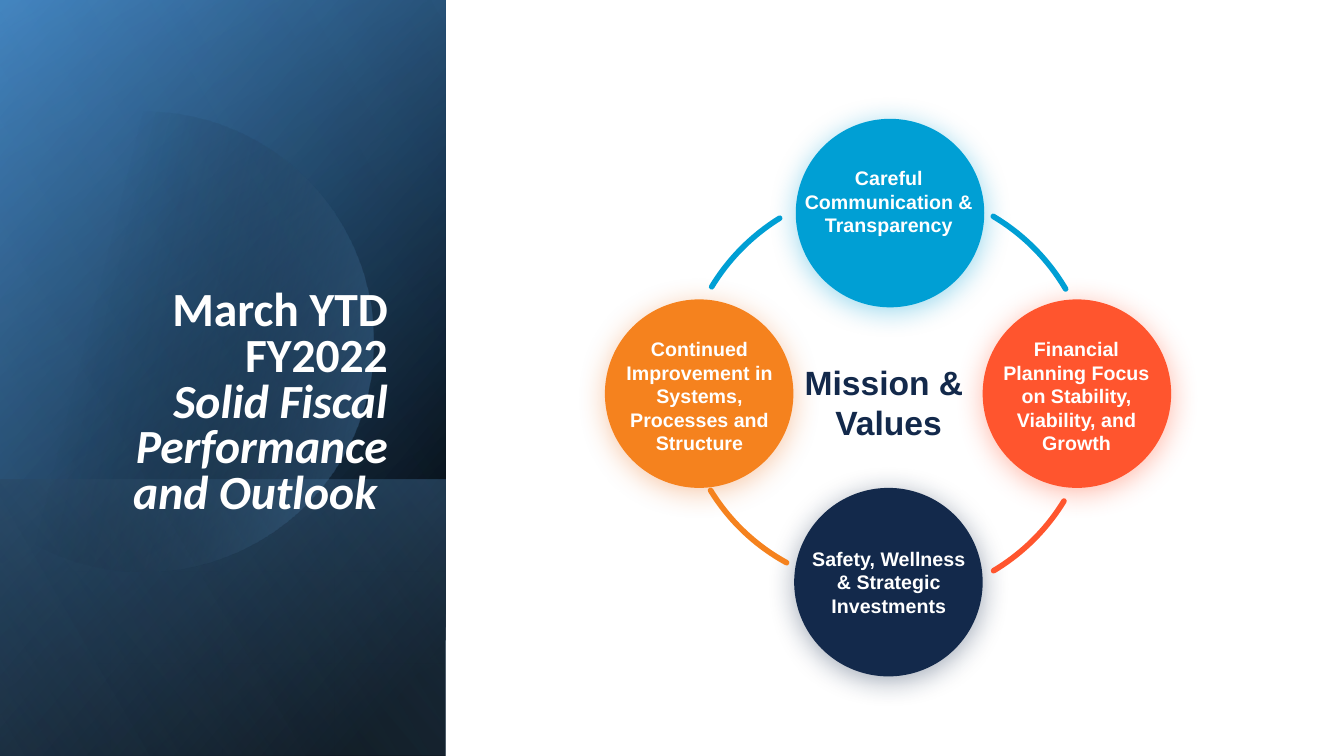
from math import acos, cos, sin

from pptx import Presentation
from pptx.dml.color import RGBColor
from pptx.enum.shapes import MSO_SHAPE
from pptx.enum.text import MSO_ANCHOR, PP_ALIGN
from pptx.oxml import parse_xml
from pptx.oxml.ns import nsdecls, qn
from pptx.util import Cm, Pt

RECTANGLE, ROUNDED, ARC = MSO_SHAPE.RECTANGLE, MSO_SHAPE.ROUNDED_RECTANGLE, MSO_SHAPE.ARC
TOP, MIDDLE, BOTTOM = MSO_ANCHOR.TOP, MSO_ANCHOR.MIDDLE, MSO_ANCHOR.BOTTOM
CENTER, RIGHT = PP_ALIGN.CENTER, PP_ALIGN.RIGHT

WHITE, NAVY, BLUE, RED, ORANGE = "FFFFFF", "13294B", "009FD4", "FF552E", "F5821E"

# Lengths are centimetres; gradient stops are (position %, colour, opacity %)
SLIDE_SIZE = (33.87, 19.05)
PANEL_WIDTH = 11.23
PANEL_LAYERS = [  # top, height, angle, stops
    (0, 19.05, 50, [(8, "000000", 100), (100, "2E75B6", 100)]),
    (0, 19.05, 30, [(0, "000000", 0), (99, "5B9BD5", 46)]),
    (12.09, 6.96, 130, [(2, "5B9BD5", 29), (100, "000000", 30)]),
]
DISC = {"center": (3.63, 8.6), "radius": 5.79, "angle": 14,
        "stops": [(29, "000000", 0), (100, "5B9BD5", 43)]}
TOP_LAYER = (0, 19.05, 120, [(0, "000000", 0), (99, "9DC3E6", 11)])

TITLE_BOX = (1.37, 6.55, 8.66, 6.65)
TITLE = [("March YTD FY2022", False), ("Solid Fiscal Performance and Outlook ", True)]

HUB_BOX = (20.02, 8.99, 4.75, 2.31)
HUB_LINES = ["Mission & ", "Values"]

NODE_SIZE = 4.75
LABEL_WIDTH = 4.78
NODES = [  # center, fill, glow, label center, label height, label
    ((22.43, 5.37), BLUE, BLUE, (22.4, 5.07), 2.06,
     "Careful Communication & Transparency"),
    ((27.14, 9.92), RED, RED, (27.13, 9.98), 3.25,
     "Financial Planning Focus on Stability, Viability, and Growth"),
    ((22.39, 14.67), NAVY, NAVY, (22.4, 14.67), 2.06,
     "Safety, Wellness & Strategic Investments"),
    ((17.62, 9.92), ORANGE, "ED7D31", (17.63, 9.98), 3.25,
     "Continued Improvement in Systems, Processes and Structure"),
]
RING = ((22.38, 9.92), 10.39, 10.39)
ARCS = [  # center and size, clockwise angles from the right, colour
    (RING, (31.4, 59.2), RED),
    (((22.35, 9.77), 10.34, 10.11), (119.8, 149.8), ORANGE),
    (RING, (211.2, 238.3), BLUE),
    (RING, (300.7, 329.5), BLUE),
]


def rgb(value):
    return RGBColor.from_string(value)


def centered(center, width, height):
    """Return left, top, width, height of a box around its center."""
    return center[0] - width / 2, center[1] - height / 2, width, height


def add_plain(kind, box):
    """Add a preset shape without shadow, fill or line."""
    shape = slide.shapes.add_shape(kind, *map(Cm, box))
    clear(shape)
    return shape


def clear(shape):
    shape.shadow.inherit = False
    shape.fill.background()
    shape.line.fill.background()


def fill_gradient(shape, angle, stops):
    stops_xml = "".join(
        f'<a:gs pos="{position * 1000}"><a:srgbClr val="{color}">'
        f'<a:alpha val="{opacity * 1000}"/></a:srgbClr></a:gs>'
        for position, color, opacity in stops)
    properties = shape.element.spPr
    properties.replace(properties.find(qn("a:noFill")), parse_xml(
        f'<a:gradFill rotWithShape="1" {nsdecls("a")}><a:gsLst>{stops_xml}</a:gsLst>'
        f'<a:lin ang="{angle * 60000}" scaled="0"/></a:gradFill>'))


def add_panel_layer(top, height, angle, stops):
    """Add a mirrored rectangle turned by 90 degrees, so its sides swap."""
    center = (PANEL_WIDTH / 2, top + height / 2)
    shape = add_plain(RECTANGLE, centered(center, height, PANEL_WIDTH))
    shape.rotation = 90
    shape.element.spPr.find(qn("a:xfrm")).set("flipH", "1")
    fill_gradient(shape, angle, stops)


def add_disc(center, radius, angle, stops):
    """Add a disc cut off at the left slide edge."""
    limit = acos(-center[0] / radius)
    steps = 120
    turns = [limit * (2 * step / steps - 1) for step in range(steps + 1)]
    points = [(Cm(center[0] + radius * cos(turn)), Cm(center[1] + radius * sin(turn)))
              for turn in turns]
    builder = slide.shapes.build_freeform(*points[0])
    builder.add_line_segments(points[1:], close=True)
    disc = builder.convert_to_shape()
    clear(disc)
    fill_gradient(disc, angle, stops)


def set_font(font, color, **values):
    font.color.rgb = rgb(color)
    for name, value in values.items():
        setattr(font, name, value)


def add_text(box, lines, size, color, anchor):
    frame = slide.shapes.add_textbox(*map(Cm, box)).text_frame
    frame.word_wrap = True
    frame.vertical_anchor = anchor
    frame.text = "\n".join(lines)
    for paragraph in frame.paragraphs:
        paragraph.alignment = CENTER
        set_font(paragraph.font, color, name="Arial", size=Pt(size), bold=True)


def add_node(center, color, glow):
    node = add_plain(ROUNDED, centered(center, NODE_SIZE, NODE_SIZE))
    node.adjustments[0] = 0.5
    node.fill.solid()
    node.fill.fore_color.rgb = rgb(color)
    node.element.spPr.find(qn("a:effectLst")).append(parse_xml(
        f'<a:outerShdw {nsdecls("a")} blurRad="{Pt(20)}" dist="{Pt(3)}" dir="5400000" '
        f'algn="t" rotWithShape="0"><a:srgbClr val="{glow}"><a:alpha val="40000"/>'
        '</a:srgbClr></a:outerShdw>'))


def add_arc(ring, angles, color):
    arc = add_plain(ARC, centered(*ring))
    for index, angle in enumerate(angles):
        arc.adjustments[index] = angle * 0.6  # 60000 units a degree, scaled by 100000
    arc.line.color.rgb = rgb(color)
    arc.line.width = Pt(4)
    arc.element.spPr.find(qn("a:ln")).set("cap", "rnd")


def write_title():
    title = slide.shapes.title
    title.left, title.top, title.width, title.height = map(Cm, TITLE_BOX)
    title.element.getparent().append(title.element)  # in front of the panel
    frame = title.text_frame
    frame.word_wrap = True
    frame.vertical_anchor = BOTTOM
    paragraph = frame.paragraphs[0]
    for name, value in {"alignment": RIGHT, "line_spacing": 0.8,
                        "space_before": Pt(0), "space_after": Pt(6)}.items():
        setattr(paragraph, name, value)
    for index, (text, italic) in enumerate(TITLE):
        if index:
            paragraph.add_line_break()
        run = paragraph.add_run()
        run.text = text
        set_font(run.font, WHITE, name="Calibri", size=Pt(34), bold=True, italic=italic)


presentation = Presentation()
presentation.slide_width, presentation.slide_height = map(Cm, SLIDE_SIZE)
slide = presentation.slides.add_slide(presentation.slide_layouts[5])

for layer in PANEL_LAYERS:
    add_panel_layer(*layer)
add_disc(**DISC)
add_panel_layer(*TOP_LAYER)
write_title()

for center, color, glow, *_ in NODES:
    add_node(center, color, glow)
add_text(HUB_BOX, HUB_LINES, 24, NAVY, TOP)
for arc_values in ARCS:
    add_arc(*arc_values)
for *_, label_center, label_height, label in NODES:
    add_text(centered(label_center, LABEL_WIDTH, label_height), [label], 14, WHITE, MIDDLE)

presentation.save("out.pptx")
